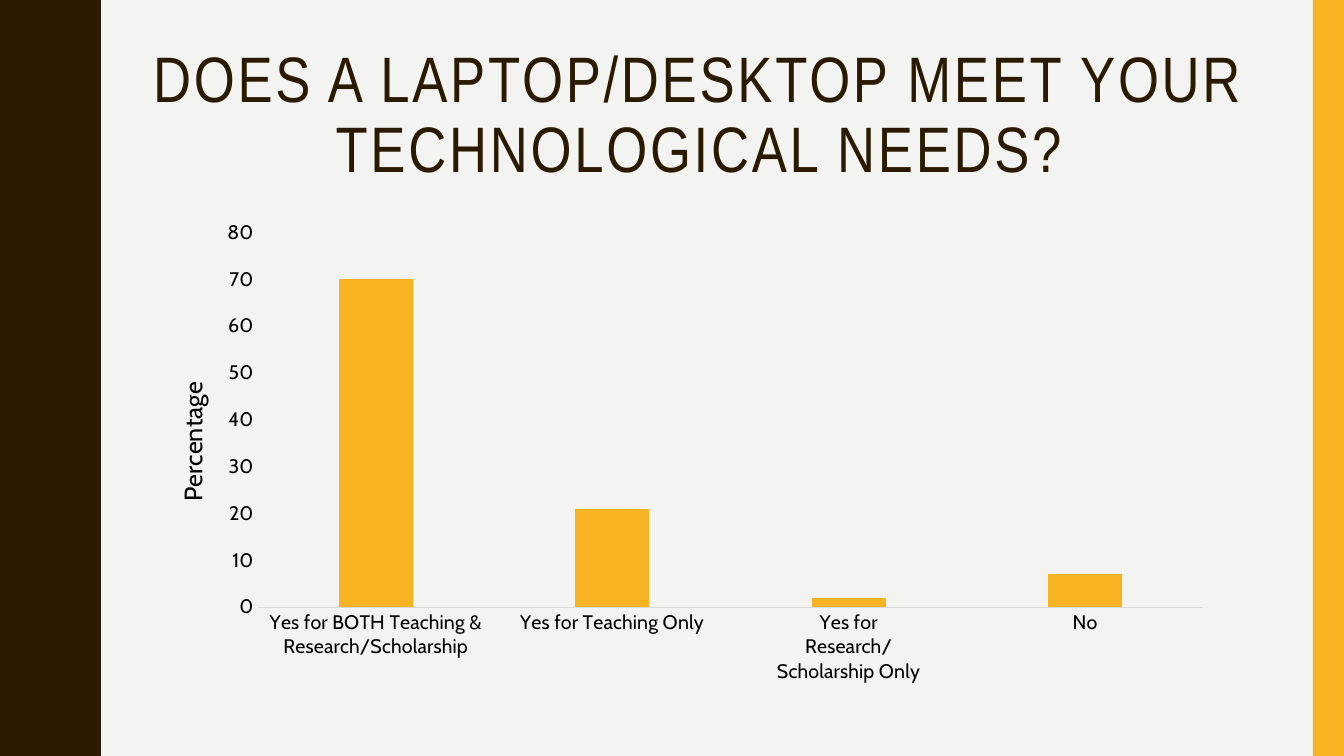
"""Build a slide with a column chart on whether a computer meets technological needs."""
from dataclasses import dataclass

from lxml.etree import SubElement
from pptx import Presentation
from pptx.chart.axis import CategoryAxis, ValueAxis
from pptx.chart.data import CategoryChartData
from pptx.dml.color import RGBColor
from pptx.enum.chart import XL_CHART_TYPE, XL_TICK_MARK
from pptx.enum.shapes import MSO_SHAPE
from pptx.enum.text import MSO_ANCHOR, PP_ALIGN
from pptx.oxml import parse_xml
from pptx.oxml.ns import nsdecls, qn
from pptx.shapes.base import BaseShape
from pptx.slide import Slide
from pptx.text.text import Font
from pptx.util import Inches, Pt

BROWN = RGBColor(0x2A, 0x1A, 0x00)
GOLD = RGBColor(0xF8, 0xB3, 0x23)
PAPER = RGBColor(0xF3, 0xF3, 0xF2)
BLACK = RGBColor(0x00, 0x00, 0x00)
AXIS_GRAY = RGBColor(0xD9, 0xD9, 0xD9)

PAGE_WIDTH, PAGE_HEIGHT = 13.33, 7.5
WAVE_LENGTH = 1.5
HALF_WAVE = [
    (0.78, 0), (0.78, 0.07), (0.79, 0.14), (0.8, 0.2), (0.81, 0.25),
    (0.83, 0.29), (0.85, 0.33), (0.87, 0.38), (0.89, 0.42), (0.91, 0.46),
    (0.93, 0.5), (0.95, 0.55), (0.96, 0.61), (0.97, 0.68), (0.97, 0.75),
]
ANSWERS = {
    "Yes for BOTH Teaching & Research/Scholarship": 70,
    "Yes for Teaching Only": 21,
    "Yes for\nResearch/\nScholarship Only": 2,
    "No": 7,
}


@dataclass(frozen=True)
class Frame:
    """Position and size in inches."""
    left: float
    top: float
    width: float
    height: float

    def lengths(self) -> list[int]:
        """Return the four values as slide lengths."""
        return [Inches(value) for value in (self.left, self.top, self.width, self.height)]


@dataclass(frozen=True)
class TextStyle:
    """Font settings for one kind of text."""
    name: str
    size: float
    color: RGBColor

    def apply(self, font: Font) -> None:
        """Set the font from this style."""
        values = {"name": self.name, "size": Pt(self.size), "bold": False}
        for attribute, value in values.items():
            setattr(font, attribute, value)
        font.color.rgb = self.color


TITLE_STYLE = TextStyle("Arial Narrow", 45.9, BROWN)
CHART_STYLE = TextStyle("Cabin", 10, BLACK)
TICK_STYLE = TextStyle("Cabin", 14, BLACK)
AXIS_TITLE_STYLE = TextStyle("Cabin", 18, BLACK)
TITLE_FRAME = Frame(1.37, 0.42, 11.13, 0.79)
CHART_FRAME = Frame(1.37, 2.12, 10.78, 4.66)
STRIPE_FRAME = Frame(13.02, 0, 0.31, PAGE_HEIGHT)


def paint(shape: BaseShape, color: RGBColor) -> None:
    """Give a shape a plain fill without line or shadow."""
    shape.shadow.inherit = False
    shape.fill.solid()
    shape.fill.fore_color.rgb = color
    shape.line.fill.background()


def add_borders(page: Slide) -> None:
    """Draw the wavy left edge and the gold right stripe."""
    mirrored = [(x, WAVE_LENGTH - y) for x, y in reversed(HALF_WAVE[:-1])]
    wave_count = int(PAGE_HEIGHT / WAVE_LENGTH)
    edge = [(x, y + wave * WAVE_LENGTH)
            for wave in range(wave_count) for x, y in HALF_WAVE + mirrored]
    builder = page.shapes.build_freeform(0, 0, scale=Inches(1))
    builder.add_line_segments(edge + [(0, PAGE_HEIGHT)], close=True)
    paint(builder.convert_to_shape(), BROWN)
    stripe = page.shapes.add_shape(MSO_SHAPE.RECTANGLE, *STRIPE_FRAME.lengths())
    paint(stripe, GOLD)


def add_title(page: Slide, text: str) -> None:
    """Add the centred, letter-spaced heading."""
    box = page.shapes.add_textbox(*TITLE_FRAME.lengths())
    box.text_frame.word_wrap = True
    box.text_frame.vertical_anchor = MSO_ANCHOR.TOP
    para = box.text_frame.paragraphs[0]
    para.alignment = PP_ALIGN.CENTER
    para.line_spacing = 0.9
    span = para.add_run()
    span.text = text
    TITLE_STYLE.apply(span.font)
    span.font._element.set("spc", "200")


def set_layout(parent, position: int, **fractions: float) -> None:
    """Place a chart part by fractions of the chart area."""
    for old_layout in parent.findall(qn("c:layout")):
        parent.remove(old_layout)
    layout = parse_xml(f"<c:layout {nsdecls('c')}><c:manualLayout/></c:layout>")
    manual = layout[0]
    values = {"xMode": "edge", "yMode": "edge", **fractions}
    if "w" in fractions:
        SubElement(manual, qn("c:layoutTarget")).set("val", "inner")
    for name, value in values.items():
        SubElement(manual, qn(f"c:{name}")).set("val", str(value))
    parent.insert(position, layout)


def style_axis(axis: CategoryAxis | ValueAxis) -> None:
    """Remove tick marks and gridlines and set the label font."""
    values = {
        "major_tick_mark": XL_TICK_MARK.NONE,
        "minor_tick_mark": XL_TICK_MARK.NONE,
        "has_major_gridlines": False,
    }
    for attribute, value in values.items():
        setattr(axis, attribute, value)
    TICK_STYLE.apply(axis.tick_labels.font)


def add_answer_chart(page: Slide) -> None:
    """Add the column chart of answers in percent."""
    chart_data = CategoryChartData(number_format="0")
    chart_data.categories = list(ANSWERS)
    chart_data.add_series("Series 1", list(ANSWERS.values()))
    chart = page.shapes.add_chart(
        XL_CHART_TYPE.COLUMN_CLUSTERED, *CHART_FRAME.lengths(), chart_data).chart
    chart.has_legend = False
    chart.has_title = False
    CHART_STYLE.apply(chart.font)

    plot = chart.plots[0]
    for attribute, value in {"gap_width": 219, "overlap": -27, "vary_by_categories": False}.items():
        setattr(plot, attribute, value)
    columns = plot.series[0].format.fill
    columns.solid()
    columns.fore_color.rgb = GOLD

    category_axis, value_axis = chart.category_axis, chart.value_axis
    for axis in (category_axis, value_axis):
        style_axis(axis)
    category_axis.format.line.color.rgb = AXIS_GRAY
    category_axis.format.line.width = Pt(0.75)
    value_axis.format.line.fill.background()
    for attribute, value in {"minimum_scale": 0, "maximum_scale": 80, "major_unit": 10}.items():
        setattr(value_axis, attribute, value)

    axis_title = value_axis.axis_title
    para = axis_title.text_frame.paragraphs[0]
    span = para.add_run()
    span.text = "Percentage"
    AXIS_TITLE_STYLE.apply(span.font)
    body = axis_title.text_frame._txBody.bodyPr
    body.set("rot", "-5400000")
    body.set("vert", "horz")
    set_layout(axis_title._element, 1, x=0.03, y=0.35)
    plot_area = chart._chartSpace.chart.plotArea
    set_layout(plot_area, 0, x=0.11, y=0.04, w=0.87, h=0.8)


def main() -> None:
    """Build and save the slide."""
    deck = Presentation()
    deck.slide_width, deck.slide_height = Inches(PAGE_WIDTH), Inches(PAGE_HEIGHT)
    page = deck.slides.add_slide(deck.slide_layouts[6])
    page.background.fill.solid()
    page.background.fill.fore_color.rgb = PAPER
    add_borders(page)
    add_title(page, "DOES A LAPTOP/DESKTOP MEET YOUR TECHNOLOGICAL NEEDS?")
    add_answer_chart(page)
    deck.save("out.pptx")


if __name__ == "__main__":
    main()
